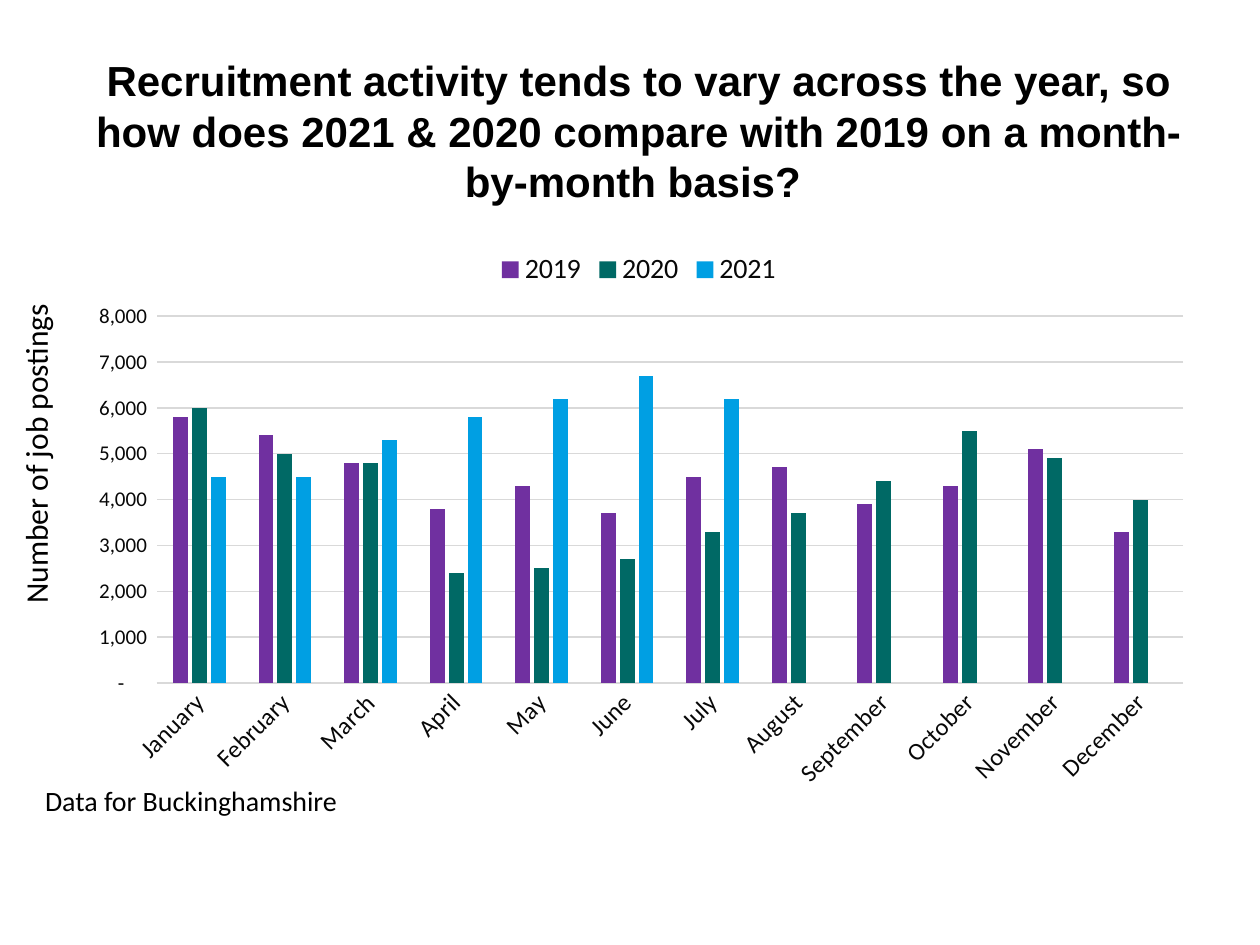
"""Build the slide comparing monthly job postings in 2019, 2020 and 2021."""
from pptx import Presentation
from pptx.chart.data import CategoryChartData
from pptx.dml.color import RGBColor
from pptx.enum.chart import XL_CHART_TYPE, XL_LEGEND_POSITION, XL_TICK_MARK
from pptx.enum.text import MSO_ANCHOR, MSO_AUTO_SIZE, PP_ALIGN
from pptx.oxml.ns import qn
from pptx.util import Pt

COLOURS = {
    "text": "000000",
    "labels": "080808",
    "grid": "D9D9D9",
    "2019": "7030A0",
    "2020": "006965",
    "2021": "009FE3",
}
MONTHS = ["January", "February", "March", "April", "May", "June", "July",
          "August", "September", "October", "November", "December"]
POSTINGS = {
    "2019": [5800, 5400, 4800, 3800, 4300, 3700, 4500, 4700, 3900, 4300, 5100, 3300],
    "2020": [6000, 5000, 4800, 2400, 2500, 2700, 3300, 3700, 4400, 5500, 4900, 4000],
    "2021": [4500, 4500, 5300, 5800, 6200, 6700, 6200] + [None] * 5,
}
NUMBER_FORMAT = '_-* #,##0_-;\\-* #,##0_-;_-* "-"??_-;_-@_-'


def apply(target, values):
    for name, value in values.items():
        setattr(target, name, value)


def colour(name):
    return RGBColor.from_string(COLOURS[name])


def format_font(font, size, shade="text", family="Calibri", bold=False):
    apply(font, {"name": family, "size": Pt(size), "bold": bold})
    font.color.rgb = colour(shade)


def format_line(line):
    line.width = Pt(0.75)
    line.color.rgb = colour("grid")


def place(element, left, top, width, height):
    apply(element, {"left": Pt(left), "top": Pt(top),
                    "width": Pt(width), "height": Pt(height)})


def add_title(slide, text):
    title = slide.shapes.title
    place(title, 41, 29.5, 648, 90)
    frame = title.text_frame
    apply(frame, {"text": text, "word_wrap": True,
                  "auto_size": MSO_AUTO_SIZE.NONE,
                  "vertical_anchor": MSO_ANCHOR.MIDDLE})
    paragraph = frame.paragraphs[0]
    paragraph.alignment = PP_ALIGN.CENTER
    format_font(paragraph.runs[0].font, 24, family="Arial", bold=True)


def add_label(slide, text, box, size, direction="horz"):
    label = slide.shapes.add_textbox(*map(Pt, box))
    frame = label.text_frame
    apply(frame, {"text": text, "word_wrap": True,
                  "auto_size": MSO_AUTO_SIZE.SHAPE_TO_FIT_TEXT})
    frame._txBody.bodyPr.set("vert", direction)
    format_font(frame.paragraphs[0].runs[0].font, size)


def format_axes(chart):
    months, postings = chart.category_axis, chart.value_axis
    for axis, size in ((months, 14), (postings, 12)):
        apply(axis, {"major_tick_mark": XL_TICK_MARK.NONE,
                     "minor_tick_mark": XL_TICK_MARK.NONE})
        format_font(axis.tick_labels.font, size, "labels")
    format_line(months.format.line)
    months._element.find(qn("c:txPr")).find(qn("a:bodyPr")).set("rot", "-2700000")
    apply(postings, {"minimum_scale": 0, "maximum_scale": 8000,
                     "major_unit": 1000, "has_major_gridlines": True})
    format_line(postings.major_gridlines.format.line)
    postings.format.line.fill.background()
    apply(postings.tick_labels, {"number_format": NUMBER_FORMAT,
                                 "number_format_is_linked": False})


def add_postings_chart(slide):
    chart_data = CategoryChartData(number_format=NUMBER_FORMAT)
    chart_data.categories = MONTHS
    for year, values in POSTINGS.items():
        chart_data.add_series(year, values)
    chart = slide.shapes.add_chart(
        XL_CHART_TYPE.COLUMN_CLUSTERED,
        Pt(41), Pt(136), Pt(648), Pt(321), chart_data).chart
    apply(chart, {"has_title": False, "has_legend": True})
    format_font(chart.font, 10)
    apply(chart.legend, {"position": XL_LEGEND_POSITION.TOP,
                         "include_in_layout": False})
    format_font(chart.legend.font, 16, "labels")
    format_axes(chart)
    columns = chart.plots[0]
    apply(columns, {"gap_width": 219, "overlap": -27, "vary_by_categories": False})
    for year in columns.series:
        year.format.fill.solid()
        year.format.fill.fore_color.rgb = colour(year.name)


def main():
    deck = Presentation()
    apply(deck, {"slide_width": Pt(720), "slide_height": Pt(540)})
    slide = deck.slides.add_slide(deck.slide_layouts[5])
    add_title(slide, "Recruitment activity tends to vary across the year, so how does "
                     "2021 & 2020 compare with 2019 on a month-by-month basis? ")
    add_postings_chart(slide)
    add_label(slide, "Data for Buckinghamshire", (18.7, 444.2, 272, 26.6), 16)
    add_label(slide, "Number of job postings", (5.8, 149.8, 36, 202.3), 18, "vert270")
    deck.save("out.pptx")


if __name__ == "__main__":
    main()
